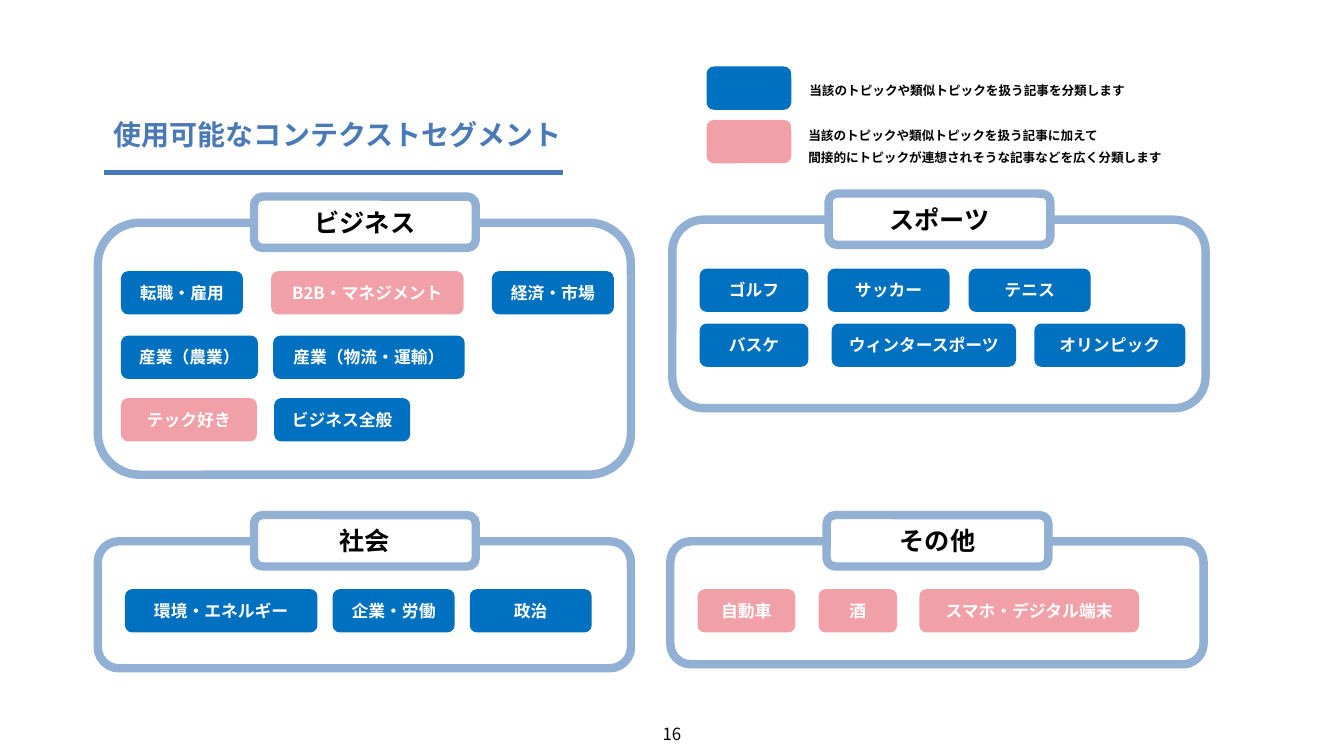
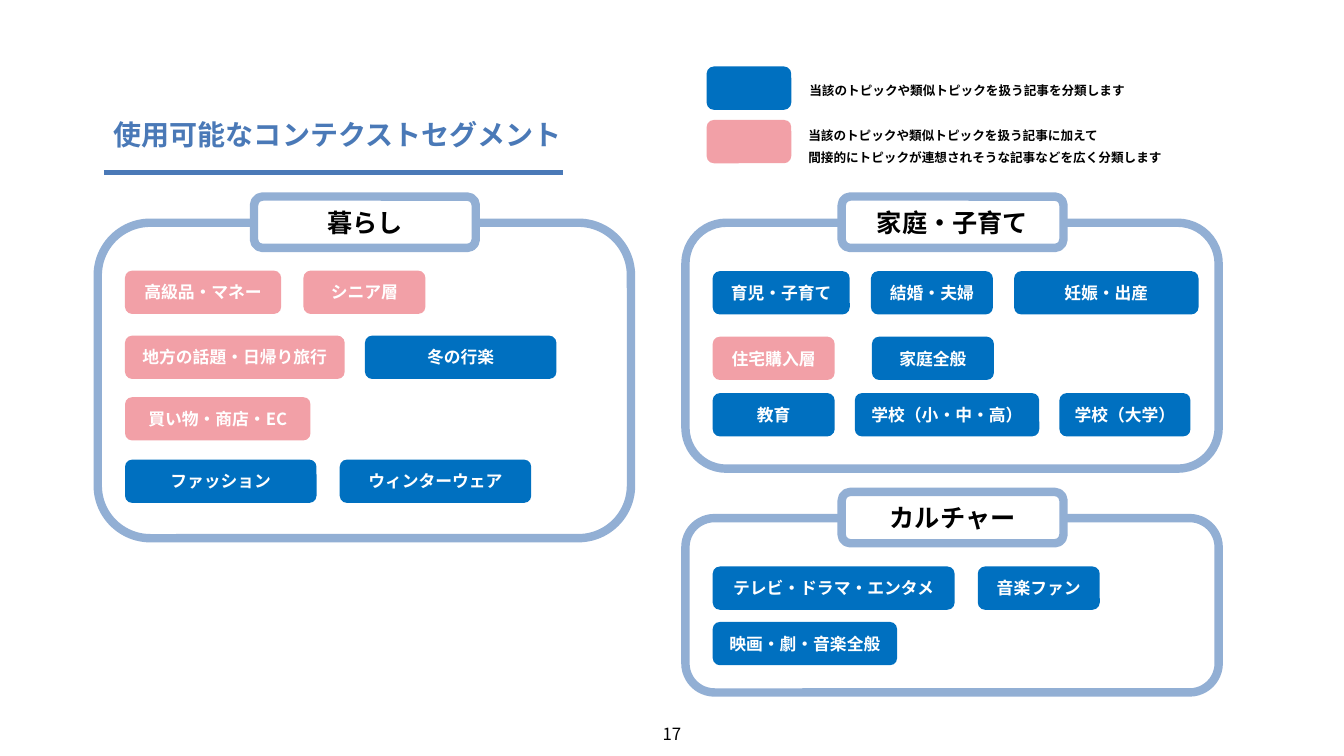
from lxml import etree
from pptx import Presentation
from pptx import util as u
from pptx.dml.color import RGBColor
from pptx.enum import shapes, text
from pptx.oxml import ns

FONT = "Noto Sans CJK JP"
BLUE, PINK, WHITE, BLACK = "0070C0", "F2A0A7", "FFFFFF", "000000"
TITLE, FRAME = "4A79B7", "92AFD4"
COLUMNS, ROWS = 133.33, 75
CHIP_HEIGHT = 4.3

PAGES = {
    16: [
        ("ビジネス", 9.7, 22.1, 25, [
            (4.8, [(2.3, 12.1, "転職・雇用", BLUE),
                   (17.2, 19.1, "B2B・マネジメント", PINK),
                   (39.1, 12.1, "経済・市場", BLUE)]),
            (11.2, [(2.3, 13.6, "産業（農業）", BLUE),
                    (17.4, 19, "産業（物流・運輸）", BLUE)]),
            (17.4, [(2.3, 13.5, "テック好き", PINK),
                    (17.5, 13.5, "ビジネス全般", BLUE)]),
        ]),
        ("社会", 9.7, 53.7, 12.6, [
            (4.75, [(2.7, 19.1, "環境・エネルギー", BLUE),
                    (23.3, 12.1, "企業・労働", BLUE),
                    (36.9, 12.1, "政治", BLUE)]),
        ]),
        ("スポーツ", 66.7, 21.8, 18.7, [
            (4.85, [(2.7, 10.8, "ゴルフ", BLUE),
                    (15.4, 12.1, "サッカー", BLUE),
                    (29.4, 12.1, "テニス", BLUE)]),
            (10.3, [(2.7, 10.8, "バスケ", BLUE),
                    (15.8, 18.3, "ウィンタースポーツ", BLUE),
                    (35.9, 15, "オリンピック", BLUE)]),
        ]),
        ("その他", 66.5, 53.7, 12.2, [
            (4.75, [(2.7, 9.7, "自動車", PINK),
                    (14.7, 7.8, "酒", PINK),
                    (24.7, 21.8, "スマホ・デジタル端末", PINK)]),
        ]),
    ],
    17: [
        ("暮らし", 9.7, 22.1, 31.3, [
            (4.75, [(2.7, 15.5, "高級品・マネー", PINK),
                    (20.4, 12.1, "シニア層", PINK)]),
            (11.2, [(2.7, 21.8, "地方の話題・日帰り旅行", PINK),
                    (26.5, 19, "冬の行楽", BLUE)]),
            (17.3, [(2.7, 18.4, "買い物・商店・EC", PINK)]),
            (23.5, [(2.7, 19, "ファッション", BLUE),
                    (24, 19, "ウィンターウェア", BLUE)]),
        ]),
        ("家庭・子育て", 68, 22.1, 24.4, [
            (4.8, [(2.7, 13.6, "育児・子育て", BLUE),
                   (18.4, 12.1, "結婚・夫婦", BLUE),
                   (32.6, 18.3, "妊娠・出産", BLUE)]),
            (11.3, [(2.7, 12.1, "住宅購入層", PINK),
                    (18.5, 12.1, "家庭全般", BLUE)]),
            (16.9, [(2.7, 12.1, "教育", BLUE),
                    (16.8, 18.3, "学校（小・中・高）", BLUE),
                    (37.1, 13, "学校（大学）", BLUE)]),
        ]),
        ("カルチャー", 68, 51.4, 17.3, [
            (4.8, [(2.7, 24, "テレビ・ドラマ・エンタメ", BLUE),
                   (29, 12.1, "音楽ファン", BLUE)]),
            (10.3, [(2.7, 18.3, "映画・劇・音楽全般", BLUE)]),
        ]),
    ],
}


def color(code):
    return RGBColor.from_string(code)


def write(frame, words, size=12, ink=BLACK, bold=True, center=True,
          spacing=None, middle=True, wrap=True):
    frame.word_wrap = wrap
    anchor = text.MSO_ANCHOR
    frame.vertical_anchor = anchor.MIDDLE if middle else anchor.TOP
    for index, line in enumerate(words.split("\n")):
        para = frame.add_paragraph() if index else frame.paragraphs[0]
        para.alignment = text.PP_ALIGN.CENTER if center else text.PP_ALIGN.LEFT
        para.line_spacing = spacing
        span = para.add_run()
        span.text = line
        span.font.size = u.Pt(size)
        span.font.bold = bold
        span.font.color.rgb = color(ink)
        span.font.name = FONT
        east = etree.SubElement(span.font._element, ns.qn("a:ea"))
        east.set("typeface", FONT)


class SegmentDeck:
    """Draws segment pages on a fine grid of columns and rows."""

    def __init__(self):
        self.deck = Presentation()
        self.deck.slide_width = u.Inches(13.33)
        self.deck.slide_height = u.Inches(7.5)
        self.page = None

    def place(self, left, top, width, height):
        across = self.deck.slide_width / COLUMNS
        down = self.deck.slide_height / ROWS
        return (round(left * across), round(top * down),
                round(width * across), round(height * down))

    def label(self, area, words, **style):
        box = self.page.shapes.add_textbox(*self.place(*area))
        write(box.text_frame, words, **style)

    def rounded(self, area, fill, outline=None, words="", **style):
        box = self.page.shapes.add_shape(
            shapes.MSO_SHAPE.ROUNDED_RECTANGLE, *self.place(*area))
        box.shadow.inherit = False
        box.fill.solid()
        box.fill.fore_color.rgb = color(fill)
        if outline:
            box.line.color.rgb = color(outline)
            box.line.width = u.Pt(6)
        else:
            box.line.fill.background()
        if words:
            write(box.text_frame, words, **style)

    def rule(self, left, top, width):
        x, y, length, _ = self.place(left, top, width, 0)
        line = self.page.shapes.add_connector(
            shapes.MSO_CONNECTOR.STRAIGHT, x, y, x + length, y)
        line.line.color.rgb = color(TITLE)
        line.line.width = u.Pt(3.5)
        etree.SubElement(line._element.spPr, ns.qn("a:effectLst"))

    def legend(self, top, fill, area, words):
        self.rounded((70.1, top, 8.4, CHIP_HEIGHT), fill)
        self.label(area, words, size=9, center=False, spacing=1.5, middle=False)

    def panel(self, heading, left, top, height, rows):
        self.rounded((left, top, 52.9, height), WHITE, FRAME)
        self.rounded((left + 15.5, top - 2.6, 22, 5.1), WHITE, FRAME,
                     heading, size=18)
        for down, chips in rows:
            for across, width, words, fill in chips:
                self.rounded((left + across, top + down, width, CHIP_HEIGHT),
                             fill, words=words, ink=WHITE)

    def add_page(self, number, panels):
        self.page = self.deck.slides.add_slide(self.deck.slide_layouts[6])
        self.label((62.3, 70.8, 8.7, 4), str(number), bold=False)
        self.label((10.3, 11.5, 46.9, 4.1), "使用可能なコンテクストセグメント",
                   size=20, ink=TITLE, center=False, spacing=0.9, wrap=False)
        self.rule(10.3, 17.1, 45.6)
        for panel in panels:
            self.panel(*panel)
        self.legend(6.6, BLUE, (79.3, 7, 48, 3.1),
                    "当該のトピックや類似トピックを扱う記事を分類します")
        self.legend(11.9, PINK, (79.2, 11.4, 48, 5.3),
                    "当該のトピックや類似トピックを扱う記事に加えて\n"
                    "間接的にトピックが連想されそうな記事などを広く分類します")


def main():
    segments = SegmentDeck()
    for number, panels in PAGES.items():
        segments.add_page(number, panels)
    segments.deck.save("out.pptx")


if __name__ == "__main__":
    main()
